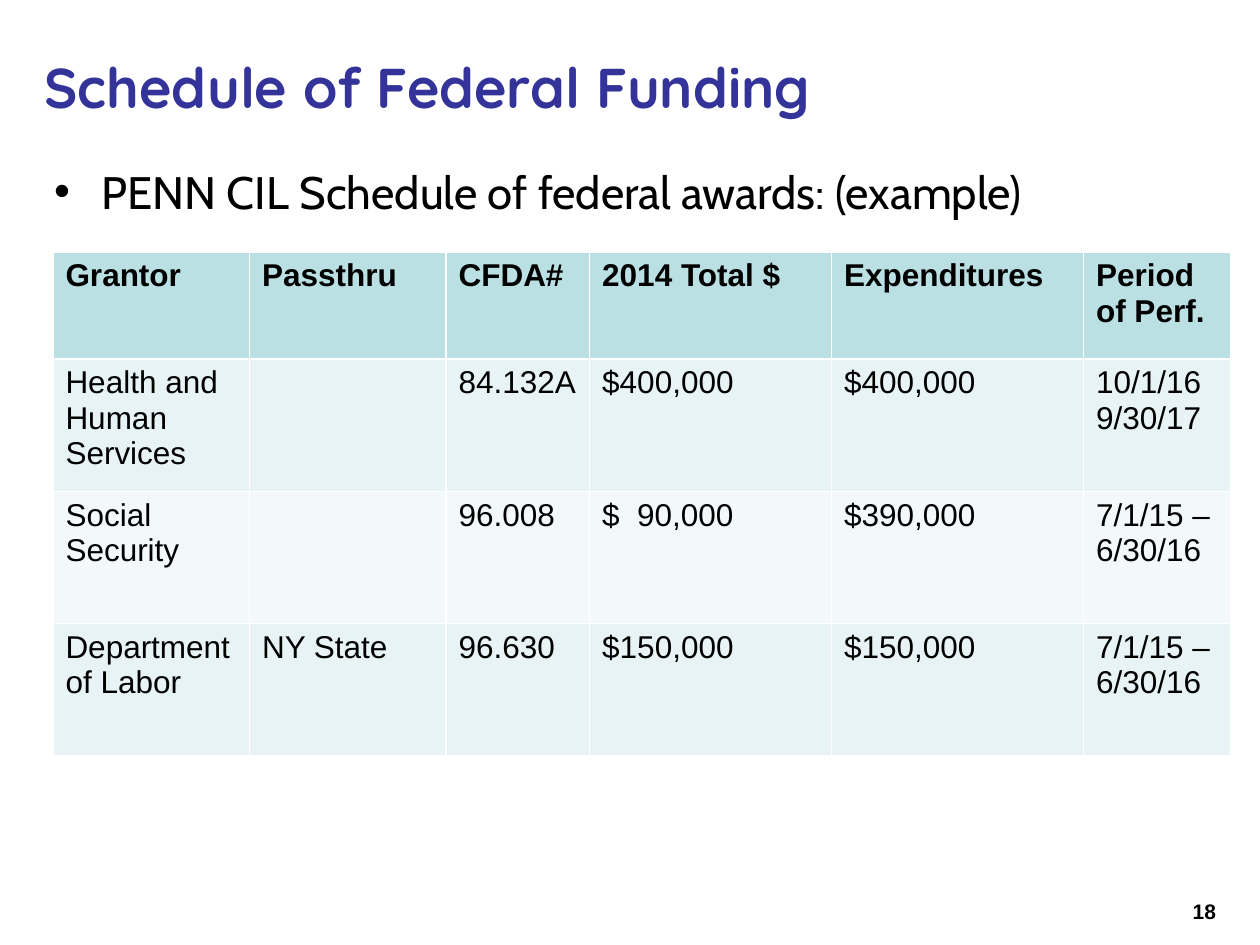
from lxml.etree import SubElement
from pptx import Presentation
from pptx.dml.color import RGBColor
from pptx.enum.text import MSO_ANCHOR, MSO_AUTO_SIZE, PP_ALIGN
from pptx.oxml.ns import qn
from pptx.util import Inches, Pt

BLACK, INDIGO = "000000", "333399"
HEADER_FILL, BAND_FILLS = "BBE0E3", ("E7F3F4", "F3F9FA")

COLUMN_WIDTHS = (1.56, 1.56, 1.14, 1.92, 2, 1.17)
ROW_HEIGHTS = (0.85, 1.05, 1.05, 1.05)
AWARDS = (
    ("Grantor", "Passthru", "CFDA#", "2014 Total $", "Expenditures", "Period of Perf."),
    ("Health and Human Services", "", "84.132A", "$400,000", "$400,000", "10/1/16 9/30/17"),
    ("Social Security", "", "96.008", "$  90,000", "$390,000", "7/1/15 – 6/30/16"),
    ("Department of Labor", "NY State", "96.630", "$150,000", "$150,000", "7/1/15 – 6/30/16"),
)


def color(hex_value):
    return RGBColor.from_string(hex_value)


def font_format(name, size, hex_value=BLACK, bold=False):
    return {"name": name, "size": Pt(size), "bold": bold, "color": hex_value}


class SlideBuilder:
    title_font = font_format("Quicksand", 32, INDIGO, bold=True)
    body_font = font_format("Cabin", 26)
    number_font = font_format("Arial", 12, bold=True)
    header_font = font_format("Arial", 18, bold=True)
    cell_font = font_format("Arial", 18)

    def __init__(self, presentation):
        self.slide = presentation.slides.add_slide(presentation.slide_layouts[1])

    def set_text(self, text_frame, text, font, alignment=PP_ALIGN.LEFT):
        text_frame.text = text
        paragraph = text_frame.paragraphs[0]
        paragraph.alignment = alignment
        for name, value in font.items():
            if name == "color":
                paragraph.font.color.rgb = color(value)
            else:
                setattr(paragraph.font, name, value)

    def place(self, shape, left, top, width, height, anchor):
        box = {"left": left, "top": top, "width": width, "height": height}
        for name, value in box.items():
            setattr(shape, name, Inches(value))
        frame_format = {
            "word_wrap": True,
            "auto_size": MSO_AUTO_SIZE.NONE,
            "vertical_anchor": anchor,
        }
        for name, value in frame_format.items():
            setattr(shape.text_frame, name, value)

    def title(self, text, *box):
        shape = self.slide.shapes.title
        self.place(shape, *box, MSO_ANCHOR.MIDDLE)
        self.set_text(shape.text_frame, text, self.title_font)

    def body(self, text, *box):
        shape = self.slide.placeholders[1]
        self.place(shape, *box, MSO_ANCHOR.TOP)
        paragraph = shape.text_frame.paragraphs[0]
        paragraph.space_before = Pt(0)
        properties = paragraph._p.get_or_add_pPr()
        properties.set("marL", "0")
        properties.set("indent", "0")
        SubElement(properties, qn("a:buNone"))
        self.set_text(shape.text_frame, text, self.body_font)

    def page_number(self, text, *box):
        shape = self.slide.shapes.add_textbox(0, 0, 0, 0)
        self.place(shape, *box, MSO_ANCHOR.TOP)
        self.set_text(shape.text_frame, text, self.number_font, PP_ALIGN.RIGHT)

    def table(self, rows, left, top):
        """Add a table with a header row and banded rows below it."""
        width, height = sum(COLUMN_WIDTHS), sum(ROW_HEIGHTS)
        table = self.slide.shapes.add_table(
            len(rows), len(rows[0]),
            Inches(left), Inches(top), Inches(width), Inches(height),
        ).table
        for column, column_width in zip(table.columns, COLUMN_WIDTHS):
            column.width = Inches(column_width)
        for index, (row, row_height) in enumerate(zip(table.rows, ROW_HEIGHTS)):
            row.height = Inches(row_height)
            fill = BAND_FILLS[(index - 1) % 2] if index else HEADER_FILL
            font = self.cell_font if index else self.header_font
            for cell, text in zip(row.cells, rows[index]):
                cell.fill.solid()
                cell.fill.fore_color.rgb = color(fill)
                self.set_text(cell.text_frame, text, font)


def main():
    presentation = Presentation()
    presentation.slide_width = Inches(10)
    presentation.slide_height = Inches(7.5)

    builder = SlideBuilder(presentation)
    builder.title("Schedule of Federal Funding", 0.25, 0.25, 8.42, 0.87)
    builder.body("PENN CIL Schedule of federal awards: (example)", 0.33, 1.25, 9.42, 5.33)
    builder.table(AWARDS, 0.42, 2)
    builder.page_number("18", 9, 7.08, 0.75, 0.27)

    presentation.save("out.pptx")


if __name__ == "__main__":
    main()
